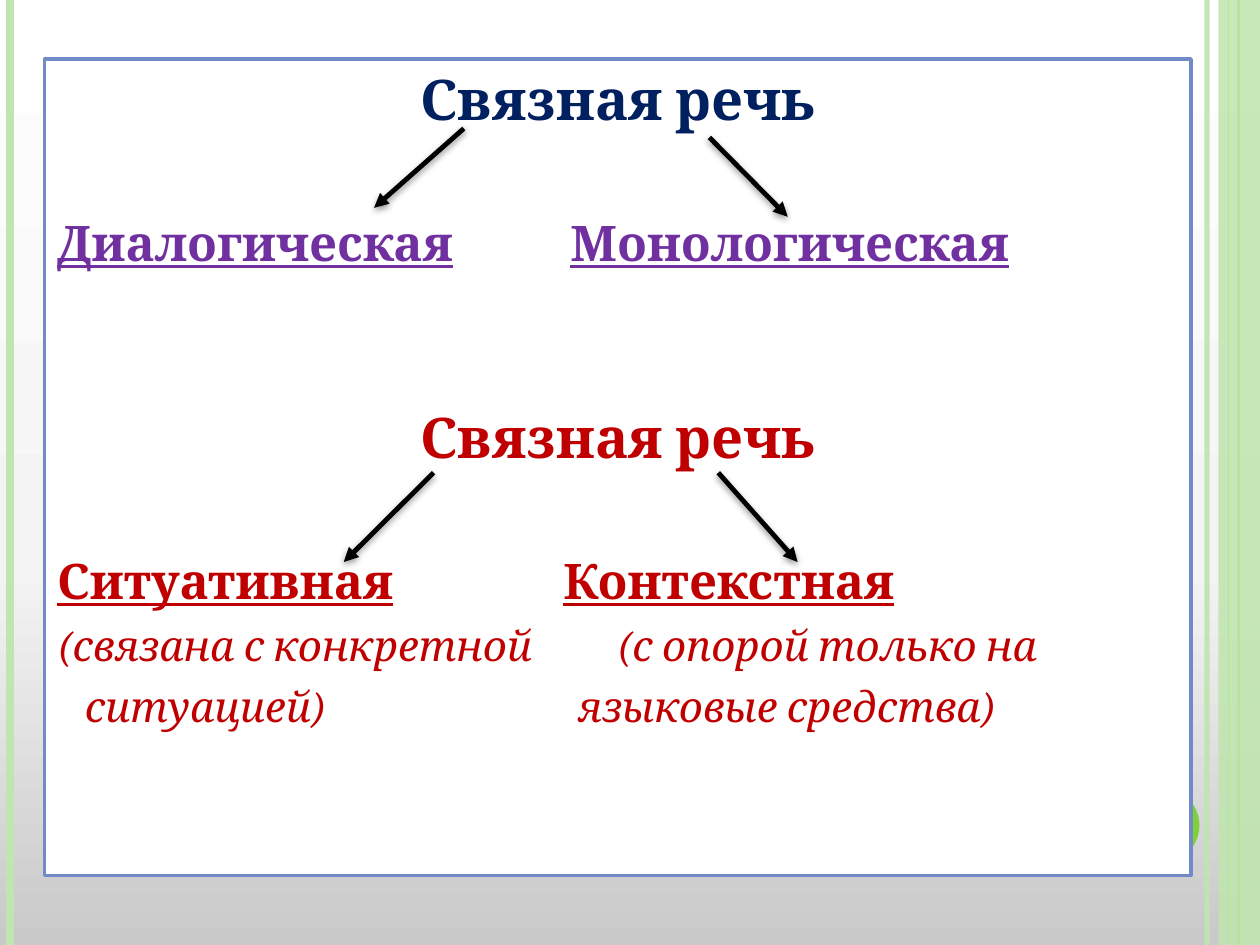
import pptx
import pptx.dml.color
import pptx.enum.shapes
import pptx.enum.text
import pptx.oxml
import pptx.oxml.ns
import pptx.util
from lxml import etree

Cm, Pt = pptx.util.Cm, pptx.util.Pt
RGB = pptx.dml.color.RGBColor.from_string
qn = pptx.oxml.ns.qn
ALIGN = pptx.enum.text.PP_ALIGN

THEME = {
    "font": "Cambria",
    "title": 32, "kind": 28, "note": 24,
    "navy": "002060", "purple": "7030A0", "red": "C00000",
    "pale": "C0E5AF", "green": "7FD13B", "frame": "738AC8",
    "paper": "FFFFFF", "arrow": "000000",
    "backdrop": [(0, "C9C9C9"), (40, "F4F4F4"), (100, "FFFFFF")],
}


def add_line(start, end, color, width):
    """Draw a straight line between two points in centimetres; return it with its effect list."""
    line = page.shapes.add_connector(
        pptx.enum.shapes.MSO_CONNECTOR.STRAIGHT, *map(Cm, start + end))
    line.line.color.rgb = RGB(THEME[color])
    line.line.width = Pt(width)
    effects = etree.SubElement(line.element.spPr, qn("a:effectLst"))
    return line, effects


def set_alpha(shape, percent):
    """Make the first colour of a shape partly transparent."""
    color = shape.element.spPr.find(".//" + qn("a:srgbClr"))
    etree.SubElement(color, qn("a:alpha"), val=str(percent * 1000))


deck = pptx.Presentation()
deck.slide_width, deck.slide_height = Cm(25.4), Cm(19.05)
page = deck.slides.add_slide(deck.slide_layouts[1])
title = page.shapes.title
title.element.getparent().remove(title.element)
box = page.placeholders[1]

# Background gradient, dark at the bottom
backdrop = page.background.fill
backdrop.gradient()
backdrop.gradient_angle = 90
stops = page.element.find(".//" + qn("a:gsLst"))
stops.clear()
for position, color in THEME["backdrop"]:
    stop = etree.SubElement(stops, qn("a:gs"), pos=str(position * 1000))
    etree.SubElement(stop, qn("a:srgbClr"), val=color)

# Edge stripes, band and dot
for x, color, width, alpha in [(24.33, "pale", 3, 93), (0.21, "pale", 4.5, 100),
                               (24.97, "green", 1.5, 100), (24.77, "green", 0.75, 100)]:
    stripe, _ = add_line((x, 0), (x, 19.05), color, width)
    if alpha < 100:
        set_alpha(stripe, alpha)

SHAPES = pptx.enum.shapes.MSO_SHAPE
for preset, place, color, alpha in [
        (SHAPES.RECTANGLE, (24.56, 0, 0.84, 19.05), "pale", 87),
        (SHAPES.OVAL, (22.66, 15.88, 1.52, 1.52), "green", 100)]:
    accent = page.shapes.add_shape(preset, *map(Cm, place))
    accent.shadow.inherit = False
    accent.fill.solid()
    accent.fill.fore_color.rgb = RGB(THEME[color])
    accent.line.fill.background()
    if alpha < 100:
        set_alpha(accent, alpha)

# Framed body, in front of the decoration
box.element.getparent().append(box.element)
for name, value in {"left": 0.9, "top": 1.19, "width": 23.11, "height": 16.46}.items():
    setattr(box, name, Cm(value))
box.fill.solid()
box.fill.fore_color.rgb = RGB(THEME["paper"])
box.line.color.rgb = RGB(THEME["frame"])
box.line.width = Pt(2)
frame = box.text_frame
for name, value in {
        "word_wrap": True, "auto_size": pptx.enum.text.MSO_AUTO_SIZE.NONE,
        "vertical_anchor": pptx.enum.text.MSO_ANCHOR.TOP,
        "margin_left": Cm(0.25), "margin_right": Cm(0.25),
        "margin_top": Cm(0.12), "margin_bottom": Cm(0.13)}.items():
    setattr(frame, name, value)

# Rows: texts, style, colour, space before (pt), left indent (cm), widening of the gap (pt)
STYLES = {
    "title": {"bold": True},
    "kind": {"bold": True, "underline": True},
    "note": {"bold": False, "italic": True},
}
rows = [
    (["Связная речь"], "title", "navy", 0, 0, 0),
    (["Диалогическая", " ", "Монологическая"], "kind", "purple", 46, 0, 61),
    (["Связная речь"], "title", "red", 75, 0, 0),
    (["Ситуативная", " ", "Контекстная"], "kind", "red", 46, 0, 91),
    (["(связана с конкретной", " ", "(с опорой только на"], "note", "red", 6, 0, 43),
    (["ситуацией)", " ", "языковые средства)"], "note", "red", 6, 0.56, 138),
]
for index, (texts, style, color, before, indent, gap) in enumerate(rows):
    para = frame.paragraphs[0] if index == 0 else frame.add_paragraph()
    para.alignment = ALIGN.CENTER if style == "title" else ALIGN.LEFT
    para.space_before = Pt(before)
    settings = para._p.get_or_add_pPr()
    settings.set("marL", str(int(Cm(indent))))
    settings.set("indent", "0")
    etree.SubElement(settings, qn("a:buNone"))
    for text in texts:
        span = para.add_run()
        span.text = text
        span.font.color.rgb = RGB(THEME[color])
        look = {"name": THEME["font"], "size": Pt(THEME[style]), **STYLES[style]}
        if text == " ":
            look["underline"] = False
            span._r.get_or_add_rPr().set("spc", str(gap * 100))
        for name, value in look.items():
            setattr(span.font, name, value)

# Arrows from each heading to its two kinds
for start, end in [((9.35, 2.59), (7.54, 4.19)), ((14.3, 2.77), (15.88, 4.37)),
                   ((8.74, 9.53), (6.93, 11.33)), ((14.48, 9.53), (16.08, 11.33))]:
    arrow, effects = add_line(start, end, "arrow", 2.75)
    etree.SubElement(arrow.line._get_or_add_ln(), qn("a:tailEnd"), type="triangle")
    shadow = etree.SubElement(effects, qn("a:outerShdw"), blurRad=str(int(Pt(4))),
                              dist=str(int(Pt(1.6))), dir="5400000", rotWithShape="0")
    shade = etree.SubElement(shadow, qn("a:srgbClr"), val=THEME["arrow"])
    etree.SubElement(shade, qn("a:alpha"), val="42000")

deck.save("out.pptx")
